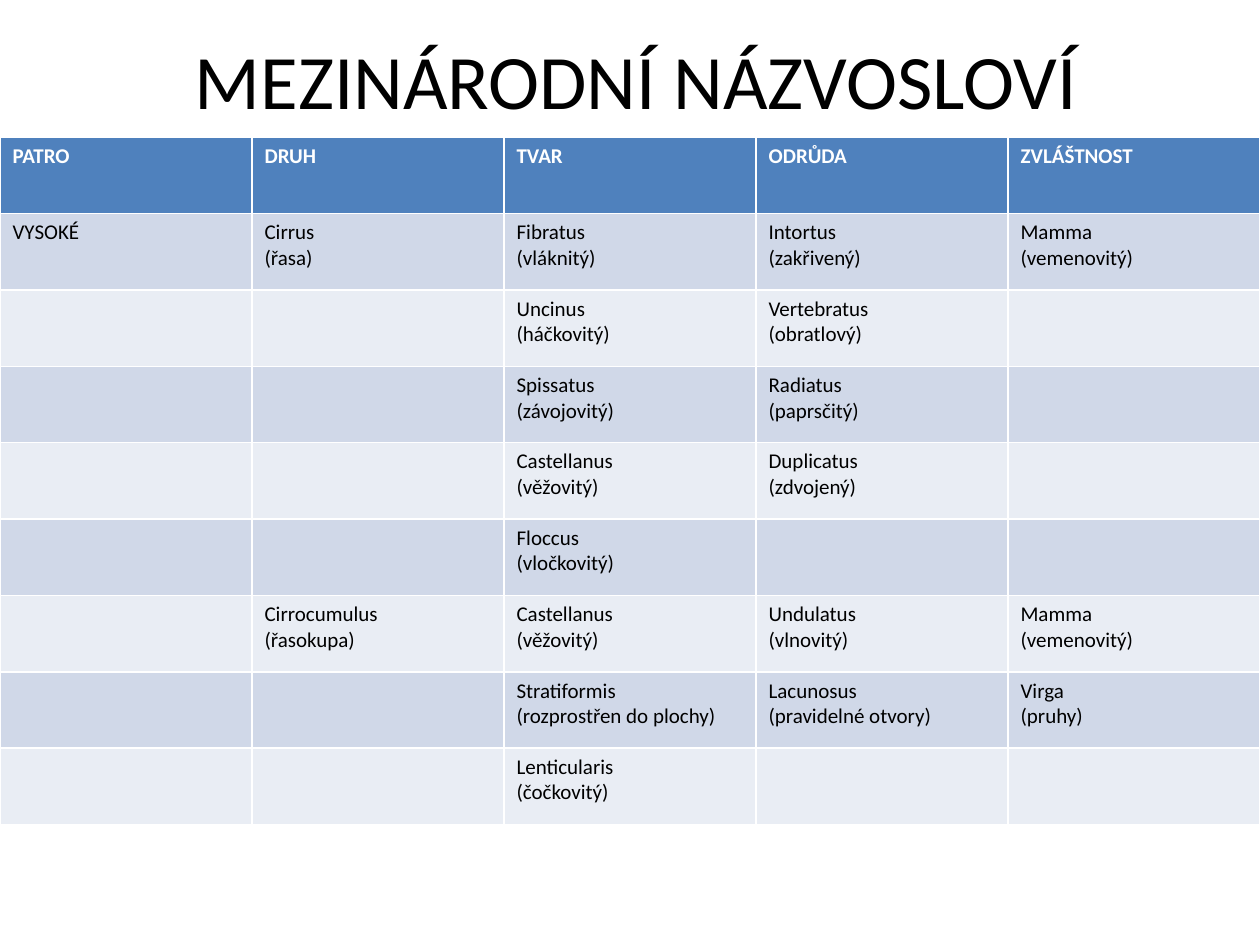
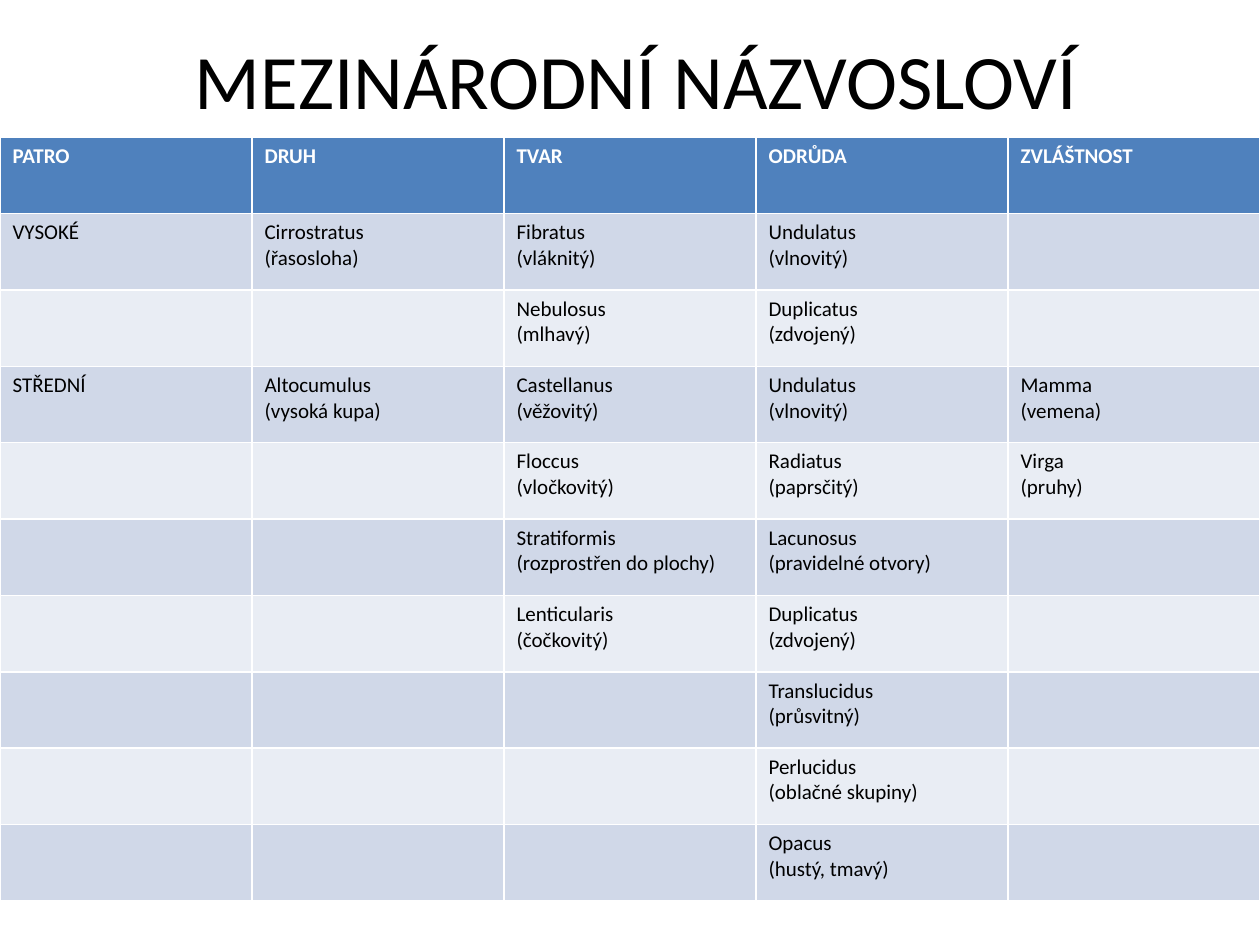
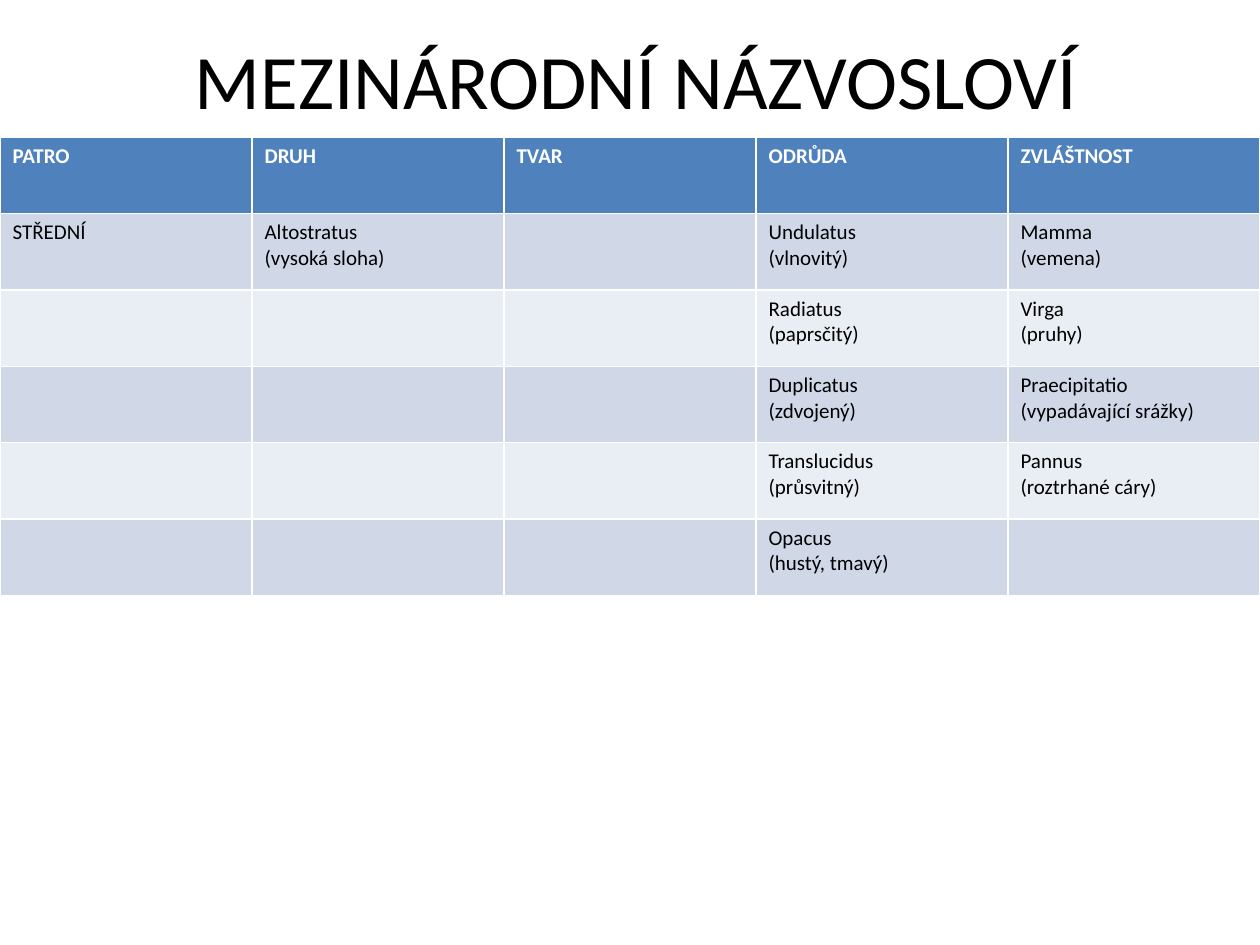
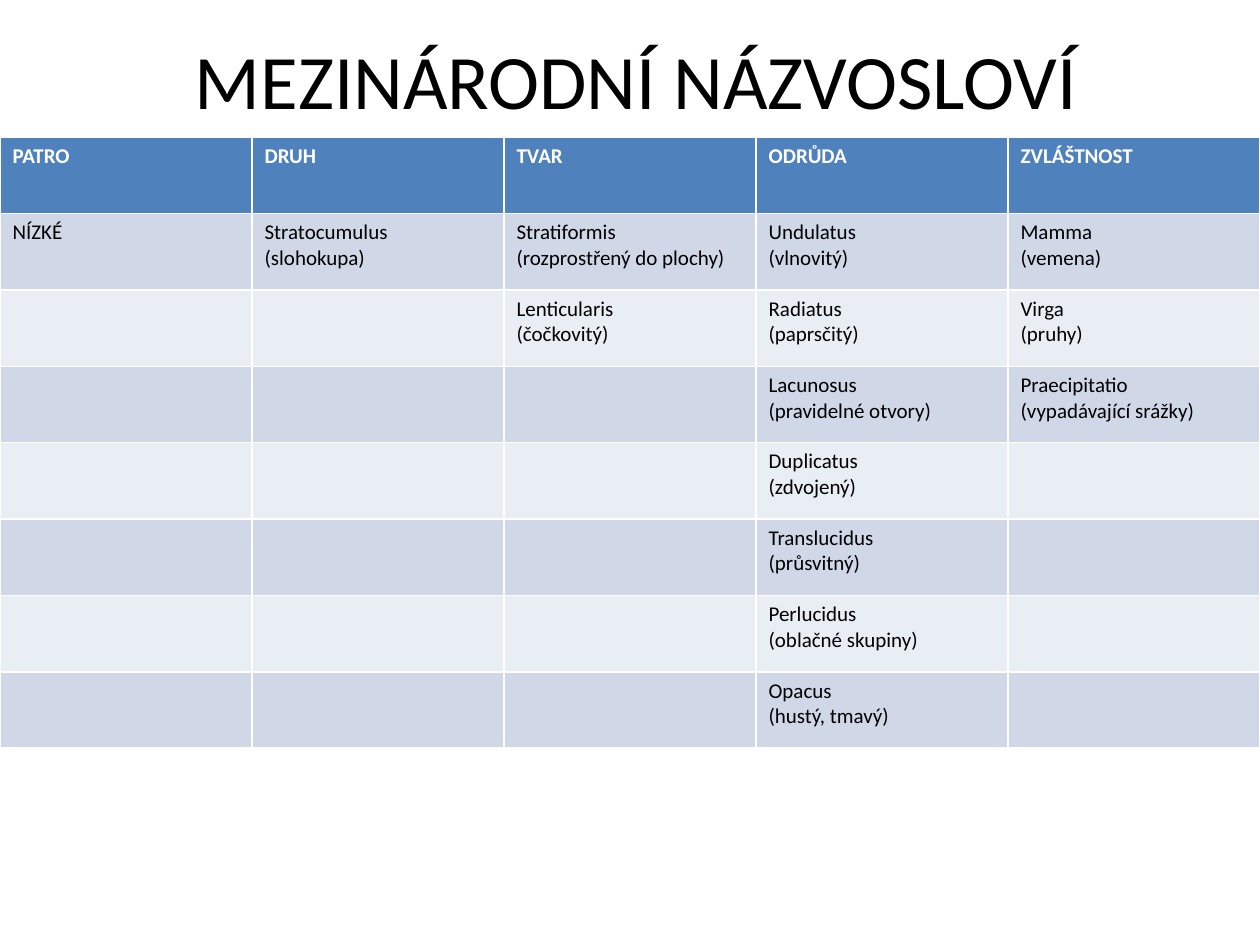
from pptx import Presentation
from pptx.dml.color import RGBColor
from pptx.enum.text import MSO_ANCHOR as Anchor, PP_ALIGN as Align
from pptx.util import Inches, Pt

# Shared look
WIDTH, HEIGHT = Inches(10), Inches(7.5)
TITLE = "MEZINÁRODNÍ NÁZVOSLOVÍ"
HEADINGS = ("PATRO", "DRUH", "TVAR", "ODRŮDA", "ZVLÁŠTNOST")
HEADER_FILL = "4F81BD"
BAND_FILLS = ("E9EDF4", "D0D8E8")
TITLE_FRAME = {"left": Inches(0.55), "top": 0, "width": Inches(9), "height": Inches(1.25)}
TITLE_FONT = {"name": "Calibri", "size": Pt(44), "bold": False}
HEADER_FONT = {"name": "Calibri", "size": Pt(12), "bold": True}
BODY_FONT = {"name": "Calibri", "size": Pt(12), "bold": False}

# Table grid: ten rows take 6.06 inches
TABLE_TOP = Inches(1.09)
ROW_HEIGHT = Inches(6.06) // 10
COLUMN_WIDTH = WIDTH // len(HEADINGS)

# Cloud names by slide; the Czech meaning goes on a second line
SLIDES = [
    [
        ("VYSOKÉ", "Cirrus (řasa)", "Fibratus (vláknitý)", "Intortus (zakřivený)", "Mamma (vemenovitý)"),
        ("", "", "Uncinus (háčkovitý)", "Vertebratus (obratlový)", ""),
        ("", "", "Spissatus (závojovitý)", "Radiatus (paprsčitý)", ""),
        ("", "", "Castellanus (věžovitý)", "Duplicatus (zdvojený)", ""),
        ("", "", "Floccus (vločkovitý)", "", ""),
        ("", "Cirrocumulus (řasokupa)", "Castellanus (věžovitý)", "Undulatus (vlnovitý)", "Mamma (vemenovitý)"),
        ("", "", "Stratiformis (rozprostřen do plochy)", "Lacunosus (pravidelné otvory)", "Virga (pruhy)"),
        ("", "", "Lenticularis (čočkovitý)", "", ""),
    ],
    [
        ("VYSOKÉ", "Cirrostratus (řasosloha)", "Fibratus (vláknitý)", "Undulatus (vlnovitý)", ""),
        ("", "", "Nebulosus (mlhavý)", "Duplicatus (zdvojený)", ""),
        ("STŘEDNÍ", "Altocumulus (vysoká kupa)", "Castellanus (věžovitý)", "Undulatus (vlnovitý)", "Mamma (vemena)"),
        ("", "", "Floccus (vločkovitý)", "Radiatus (paprsčitý)", "Virga (pruhy)"),
        ("", "", "Stratiformis (rozprostřen do plochy)", "Lacunosus (pravidelné otvory)", ""),
        ("", "", "Lenticularis (čočkovitý)", "Duplicatus (zdvojený)", ""),
        ("", "", "", "Translucidus (průsvitný)", ""),
        ("", "", "", "Perlucidus (oblačné skupiny)", ""),
        ("", "", "", "Opacus (hustý, tmavý)", ""),
    ],
    [
        ("STŘEDNÍ", "Altostratus (vysoká sloha)", "", "Undulatus (vlnovitý)", "Mamma (vemena)"),
        ("", "", "", "Radiatus (paprsčitý)", "Virga (pruhy)"),
        ("", "", "", "Duplicatus (zdvojený)", "Praecipitatio (vypadávající srážky)"),
        ("", "", "", "Translucidus (průsvitný)", "Pannus (roztrhané cáry)"),
        ("", "", "", "Opacus (hustý, tmavý)", ""),
    ],
    [
        ("NÍZKÉ", "Stratocumulus (slohokupa)", "Stratiformis (rozprostřený do plochy)", "Undulatus (vlnovitý)", "Mamma (vemena)"),
        ("", "", "Lenticularis (čočkovitý)", "Radiatus (paprsčitý)", "Virga (pruhy)"),
        ("", "", "", "Lacunosus (pravidelné otvory)", "Praecipitatio (vypadávající srážky)"),
        ("", "", "", "Duplicatus (zdvojený)", ""),
        ("", "", "", "Translucidus (průsvitný)", ""),
        ("", "", "", "Perlucidus (oblačné skupiny)", ""),
        ("", "", "", "Opacus (hustý, tmavý)", ""),
    ],
]


def paint(target, color):
    """Give a fill or a font a solid colour."""
    if hasattr(target, "solid"):
        target.solid()
        target.fore_color.rgb = RGBColor.from_string(color)
    else:
        target.color.rgb = RGBColor.from_string(color)


def write(frame, text, values, color):
    """Write the lines of a text and format each paragraph's runs."""
    frame.text = text
    for para in frame.paragraphs:
        for span in para.runs:
            for name, value in values.items():
                setattr(span.font, name, value)
            paint(span.font, color)


deck = Presentation()
deck.slide_width, deck.slide_height = WIDTH, HEIGHT

for cloud_rows in SLIDES:
    page = deck.slides.add_slide(deck.slide_layouts[5])

    # Title
    title = page.shapes.title
    for name, value in TITLE_FRAME.items():
        setattr(title, name, value)
    write(title.text_frame, TITLE, TITLE_FONT, "000000")
    title.text_frame.vertical_anchor = Anchor.MIDDLE
    title.text_frame.paragraphs[0].alignment = Align.CENTER

    # Table, with the white rules of the default table style
    rows = [HEADINGS, *cloud_rows]
    table = page.shapes.add_table(
        len(rows), len(HEADINGS), 0, TABLE_TOP, WIDTH, ROW_HEIGHT * len(rows)
    ).table
    for column in table.columns:
        column.width = COLUMN_WIDTH
    for row_number, texts in enumerate(rows):
        table.rows[row_number].height = ROW_HEIGHT
        is_header = row_number == 0
        for column_number, text in enumerate(texts):
            cell = table.cell(row_number, column_number)
            paint(cell.fill, HEADER_FILL if is_header else BAND_FILLS[row_number % 2])
            if text:
                write(
                    cell.text_frame,
                    text.replace(" (", "\n("),
                    HEADER_FONT if is_header else BODY_FONT,
                    "FFFFFF" if is_header else "000000",
                )

deck.save("out.pptx")
